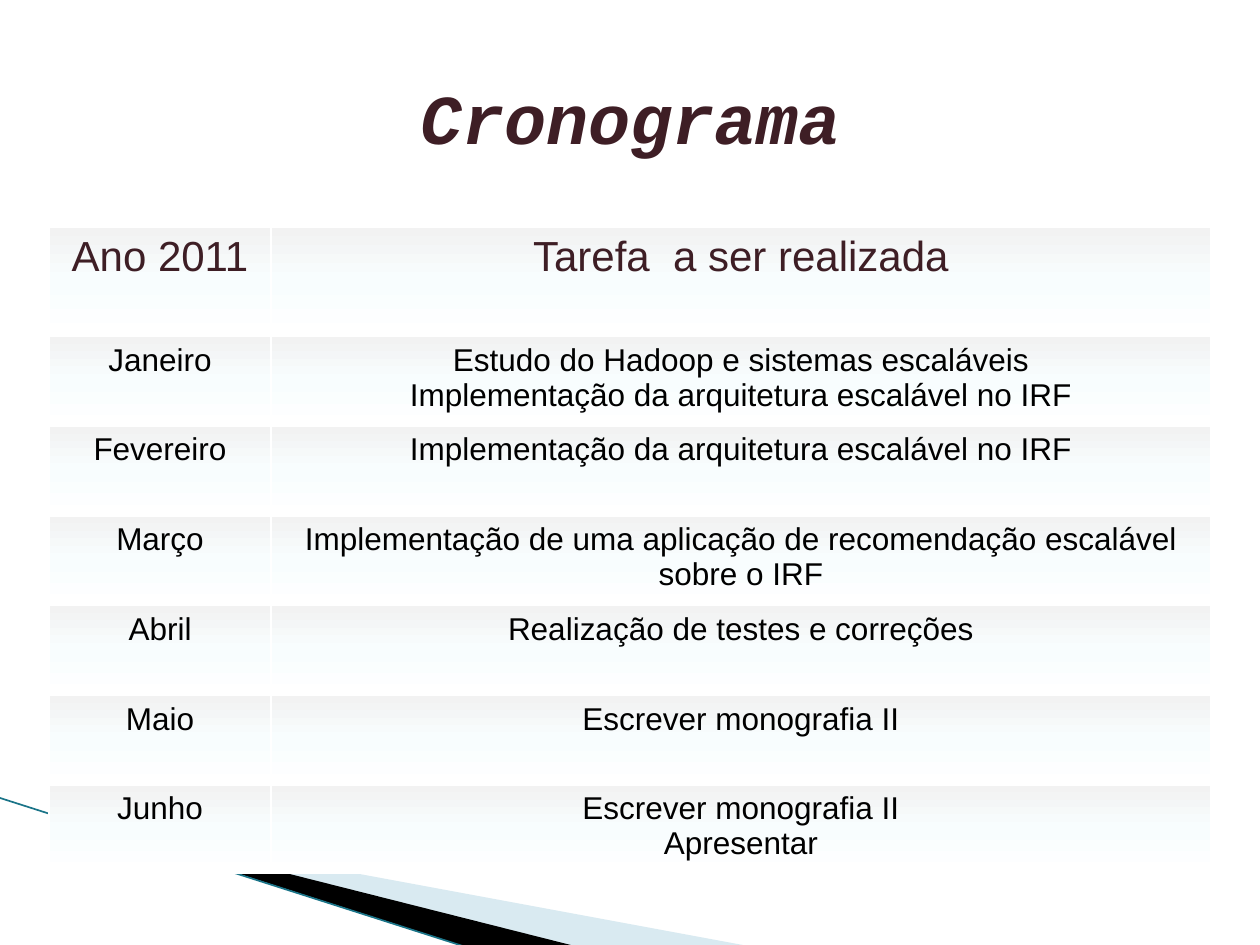
from lxml import etree
from pptx import Presentation
from pptx import util as u
from pptx.dml.color import RGBColor
from pptx.enum import shapes, text
from pptx.oxml import ns, parse_xml

WIDTH, HEIGHT = u.Inches(10), u.Inches(7.5)
COLUMNS, ROWS = 100, 75

WINE = RGBColor(0x3E, 0x1E, 0x25)
BLACK = RGBColor(0x00, 0x00, 0x00)
WHITE = RGBColor(0xFF, 0xFF, 0xFF)
PALE_BLUE = RGBColor(0xA0, 0xCB, 0xDC)
EDGE_TEAL = RGBColor(0x1A, 0x74, 0x88)
CELL_STOPS = (
    (0, RGBColor(0xF2, 0xF2, 0xF2)),
    (50, RGBColor(0xF8, 0xFD, 0xFE)),
    (100, WHITE),
)

HEADER = ("Ano 2011", "Tarefa  a ser realizada")
SCHEDULE = (
    ("Janeiro", "Estudo do Hadoop e sistemas escaláveis\n"
                "Implementação da arquitetura escalável no IRF"),
    ("Fevereiro", "Implementação da arquitetura escalável no IRF"),
    ("Março", "Implementação de uma aplicação de recomendação escalável sobre o IRF"),
    ("Abril", "Realização de testes e correções"),
    ("Maio", "Escrever monografia II"),
    ("Junho", "Escrever monografia II\nApresentar"),
)


def col(count):
    return round(WIDTH * count / COLUMNS)


def row(count):
    return round(HEIGHT * count / ROWS)


def write(frame, content, font="Arial", size=18, color=BLACK, bold=False, italic=False):
    """Fill a text frame with centred paragraphs, one for each line."""
    frame.word_wrap = True
    for index, line in enumerate(content.split("\n")):
        paragraph = frame.paragraphs[0] if index == 0 else frame.add_paragraph()
        paragraph.alignment = text.PP_ALIGN.CENTER
        run = paragraph.add_run()
        run.text = line
        run.font.name, run.font.size = font, u.Pt(size)
        run.font.color.rgb = color
        run.font.bold, run.font.italic = bold, italic


def set_frame(wedge, left, top, width, height):
    """Change the shape's frame while its outline stays in place."""
    shift_x, shift_y = wedge.left - left, wedge.top - top
    outline = wedge._element.spPr.find(".//" + ns.qn("a:path"))
    outline.set("w", str(width))
    outline.set("h", str(height))
    for point in outline.iter(ns.qn("a:pt")):
        point.set("x", str(int(point.get("x")) + shift_x))
        point.set("y", str(int(point.get("y")) + shift_y))
    wedge.left, wedge.top, wedge.width, wedge.height = left, top, width, height


def add_wedge(slide, points, frame, color, opacity=100):
    start, *rest = [(col(x), row(y)) for x, y in points]
    builder = slide.shapes.build_freeform(*start)
    builder.add_line_segments(rest, close=True)
    wedge = builder.convert_to_shape()
    left, top, width, height = frame
    set_frame(wedge, col(left), row(top), col(width), row(height))
    wedge.shadow.inherit = False
    wedge.line.fill.background()
    wedge.fill.solid()
    wedge.fill.fore_color.rgb = color
    if opacity < 100:
        tint = wedge._element.spPr.find(".//" + ns.qn("a:srgbClr"))
        etree.SubElement(tint, ns.qn("a:alpha"), val=str(opacity * 1000))


def add_edge(slide, start, end):
    edge = slide.shapes.add_connector(
        shapes.MSO_CONNECTOR.STRAIGHT,
        col(start[0]), row(start[1]), col(end[0]), row(end[1]))
    edge.line.color.rgb = EDGE_TEAL
    edge.line.width = u.Pt(0.95)
    etree.SubElement(edge._element.spPr, ns.qn("a:effectLst"))


def add_title(slide, content):
    title = slide.shapes.add_textbox(col(5), row(3), col(90), row(12.5))
    title.text_frame.vertical_anchor = text.MSO_ANCHOR.MIDDLE
    write(title.text_frame, content, font="Courier New", size=40,
          color=WINE, bold=True, italic=True)


def shade_cell(cell):
    """Give a cell a vertical three-stop gradient."""
    stops = "".join(
        f'<a:gs pos="{position * 1000}"><a:srgbClr val="{color}"/></a:gs>'
        for position, color in CELL_STOPS)
    cell._tc.get_or_add_tcPr().append(parse_xml(
        f'<a:gradFill {ns.nsdecls("a")} rotWithShape="1"><a:gsLst>{stops}</a:gsLst>'
        '<a:lin ang="5400000" scaled="0"/></a:gradFill>'))


def add_schedule(slide):
    """Add the table; its white borders come from the default table style."""
    entries = (HEADER, *SCHEDULE)
    widths = (17.6, 74.6)
    heights = (8.7, *[7.12] * (len(SCHEDULE) - 1), 6.8)
    table = slide.shapes.add_table(
        len(entries), len(widths), col(3.9), row(18),
        col(sum(widths)), row(sum(heights))).table
    for column, width in zip(table.columns, widths):
        column.width = col(width)
    for index, (entry, height) in enumerate(zip(entries, heights)):
        is_header = index == 0
        table.rows[index].height = row(height)
        for cell, content in zip(table.rows[index].cells, entry):
            shade_cell(cell)
            write(cell.text_frame, content, size=24 if is_header else 18,
                  color=WINE if is_header else BLACK)


def main():
    deck = Presentation()
    deck.slide_width, deck.slide_height = WIDTH, HEIGHT
    slide = deck.slides.add_slide(deck.slide_layouts[6])
    slide.background.fill.solid()
    slide.background.fill.fore_color.rgb = WHITE
    add_wedge(slide, ((5.5, 65.1), (59.5, 75.1), (45.6, 75.1), (5.5, 65)),
              (7.8, 54.7, 41.6, 15.8), PALE_BLUE, opacity=40)
    add_wedge(slide, ((5.3, 64.9), (45.7, 75.1), (37.2, 75.2), (5.4, 65)),
              (-0.6, 63.3, 41.6, 9.2), BLACK)
    add_edge(slide, (-0.1, 63.3), (37.1, 75.2))
    add_title(slide, "Cronograma")
    add_schedule(slide)
    deck.save("out.pptx")


if __name__ == "__main__":
    main()
